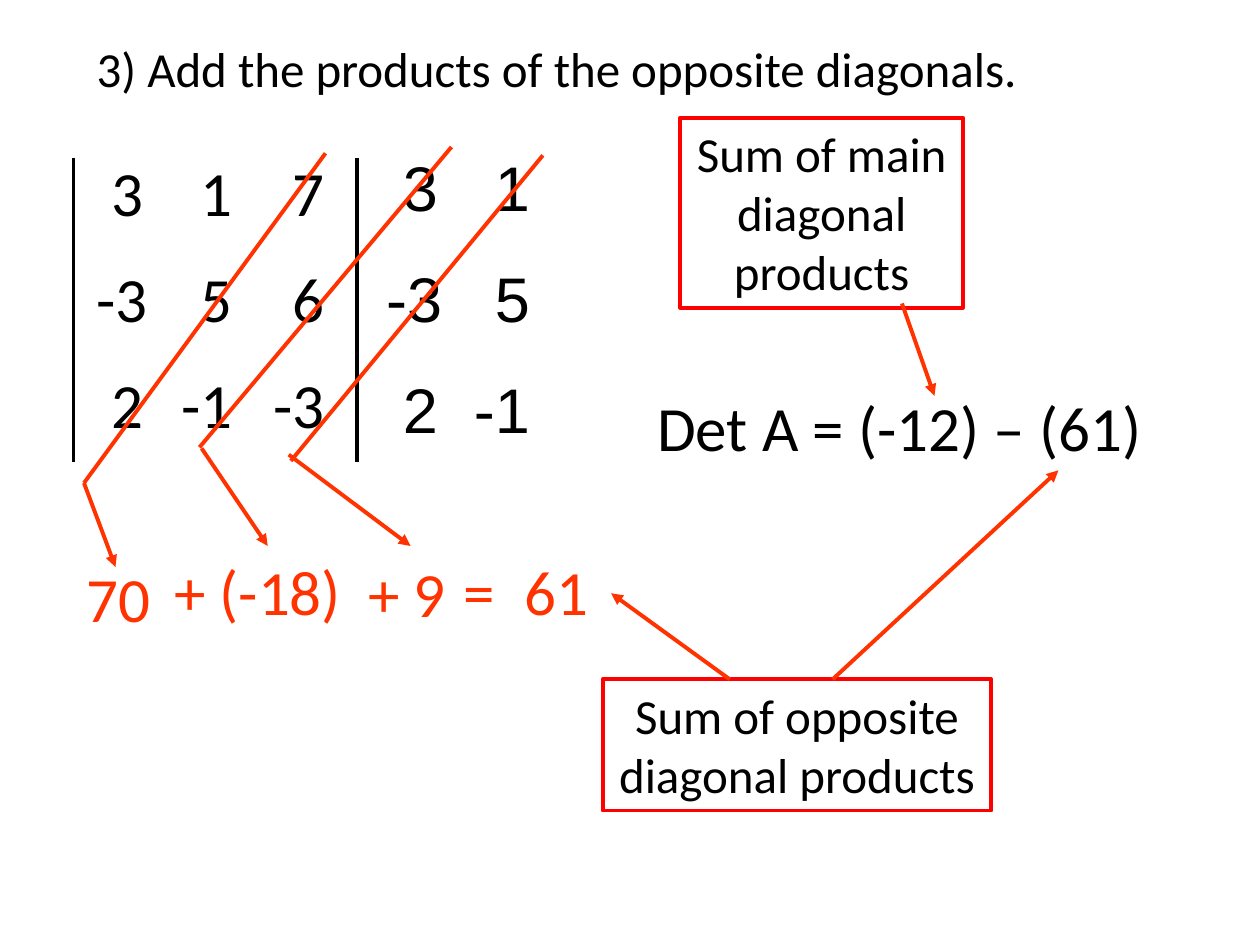
from dataclasses import dataclass

from lxml.etree import SubElement
from pptx import Presentation
from pptx.dml.color import RGBColor
from pptx.enum.shapes import MSO_CONNECTOR, MSO_SHAPE
from pptx.enum.text import MSO_ANCHOR, MSO_AUTO_SIZE, PP_ALIGN
from pptx.oxml.ns import qn
from pptx.util import Inches, Pt


@dataclass(frozen=True)
class Theme:
    ink: RGBColor = RGBColor(0, 0, 0)
    mark: RGBColor = RGBColor(0xFF, 0x33, 0)
    edge: RGBColor = RGBColor(0xFF, 0, 0)
    face: str = "Calibri"
    alt: str = "Arial"
    big: int = 36
    mid: int = 28
    rule: float = 2.25


class Board:
    """Draw styled elements on a slide with a grid of 120 columns by 90 rows."""

    def __init__(self, deck, theme):
        self.theme = theme
        self.slide = deck.slides.add_slide(deck.slide_layouts[5])
        self.shapes = self.slide.shapes
        self.col = deck.slide_width / 120
        self.row = deck.slide_height / 90

    def spot(self, x, y):
        return round(x * self.col), round(y * self.row)

    def fill(self, shape, lines, size, color=None, face=None, align=PP_ALIGN.LEFT,
             anchor=MSO_ANCHOR.TOP, gap=0, tabs=(), side="l"):
        frame = shape.text_frame
        frame.word_wrap = True
        frame.auto_size = MSO_AUTO_SIZE.NONE
        frame.vertical_anchor = anchor
        for i, line in enumerate(lines):
            para = frame.add_paragraph() if i else frame.paragraphs[0]
            para.alignment = align
            para.space_before = Pt(gap if i else 0)
            if tabs:
                stops = SubElement(para._p.get_or_add_pPr(), qn("a:tabLst"))
                for tab in tabs:
                    SubElement(stops, qn("a:tab"), pos=str(Inches(tab)), algn=side)
            run = para.add_run()
            run.text = line
            run.font.size = Pt(size)
            run.font.name = face or self.theme.face
            run.font.color.rgb = color or self.theme.ink

    def title(self, text, x, y, w, h):
        shape = self.shapes.title
        shape.left, shape.top = self.spot(x, y)
        shape.width, shape.height = self.spot(w, h)
        self.fill(shape, [text], self.theme.mid)

    def text(self, lines, x, y, w, h, **style):
        shape = self.shapes.add_textbox(*self.spot(x, y), *self.spot(w, h))
        self.fill(shape, lines, self.theme.big, **style)

    def box(self, text, x, y, w, h):
        shape = self.shapes.add_shape(
            MSO_SHAPE.RECTANGLE, *self.spot(x, y), *self.spot(w, h))
        shape.shadow.inherit = False
        shape.fill.background()
        shape.line.color.rgb = self.theme.edge
        shape.line.width = Pt(self.theme.rule)
        self.fill(shape, [text], self.theme.mid, align=PP_ALIGN.CENTER)

    def line(self, start, end, color=None, arrow=False):
        link = self.shapes.add_connector(
            MSO_CONNECTOR.STRAIGHT, *self.spot(*start), *self.spot(*end))
        link.line.color.rgb = color or self.theme.mark
        link.line.width = Pt(self.theme.rule)
        if arrow:
            SubElement(link.line._get_or_add_ln(), qn("a:tailEnd"), type="triangle")
        SubElement(link._element.spPr, qn("a:effectLst"))


def main():
    theme = Theme()
    deck = Presentation()
    deck.slide_width, deck.slide_height = Inches(10), Inches(7.5)
    board = Board(deck, theme)

    board.title("3) Add the products of the opposite diagonals.", 8, 3.1, 91, 6.8)

    board.text(["\t3\t1\t7", "\t-3\t5\t6", "\t2\t-1\t-3"], 8, 14, 34, 30,
               gap=17.5, tabs=(0.37, 1.08, 1.81), side="r")
    for x in (7, 34):
        board.line((x, 15), (x, 44), theme.ink)
    board.text(["\t3\t1", "\t-3\t5", "\t2\t-1"], 35.6, 13.6, 20, 30,
               face=theme.alt, gap=20, tabs=(0.41, 1.14), side="r")

    diagonals = [
        ((31, 14.6), (8, 46), (8, 46), (11, 54)),
        ((43, 14), (19, 42.6), (19.2, 42.7), (25.5, 52)),
        ((51.7, 14.8), (27.7, 43.9), (27.5, 43.3), (39.1, 52)),
    ]
    for top, foot, start, tip in diagonals:
        board.line(top, foot)
        board.line(start, tip, arrow=True)

    terms = [("70", 7.1, 52.7), ("+ (-18)", 15.4, 52),
             ("+ 9", 33.9, 52.2), ("=\t61", 43, 52)]
    for term, x, y in terms:
        board.text([term], x, y, 32, 8.4, color=theme.mark, tabs=(0.48,))

    board.text(["Det A = (-12) – (61)"], 61.4, 36.4, 55.1, 8.5)
    board.box("Sum of main diagonal products", 64.8, 11.2, 26.9, 18.1)
    board.box("Sum of opposite diagonal products", 57.4, 64.7, 37, 12.5)
    for start, tip in [((85.9, 28.9), (89, 37.7)),
                       ((69.5, 64.7), (58.2, 56.5)),
                       ((79.3, 64.7), (100.8, 44.8))]:
        board.line(start, tip, arrow=True)

    deck.save("out.pptx")


if __name__ == "__main__":
    main()
